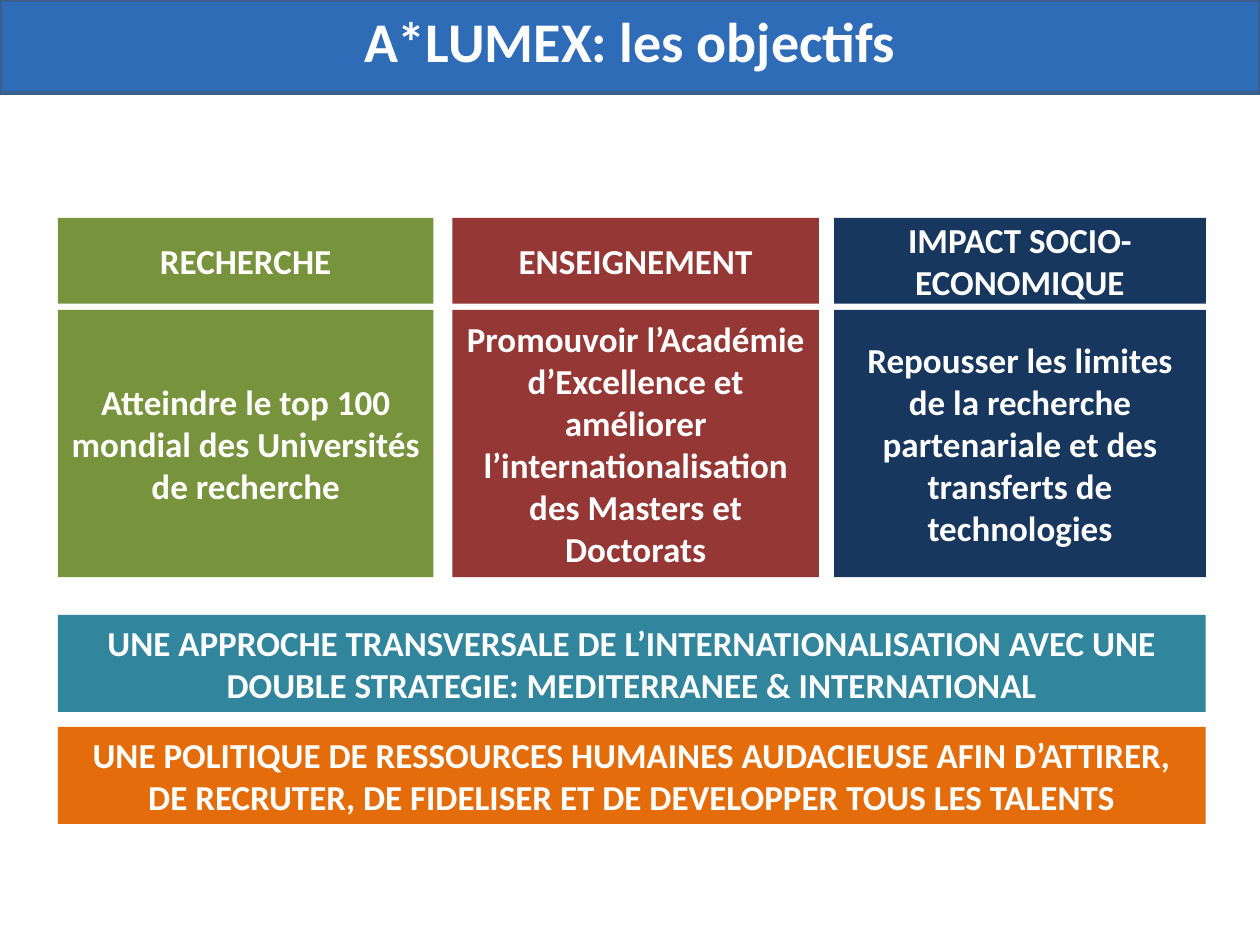
import dataclasses

import pptx
import pptx.dml.color
import pptx.enum.shapes
import pptx.enum.text
import pptx.util
from pptx.util import Inches


@dataclasses.dataclass(frozen=True)
class Theme:
    """Colours, font and type sizes of the slide."""
    font: str = "Calibri"
    title_size: int = 32
    body_size: int = 20
    text: str = "FFFFFF"
    banner: str = "2E6CB8"
    banner_edge: str = "3A5F8C"
    research: str = "77933C"
    teaching: str = "953735"
    impact: str = "17375E"
    international: str = "31859C"
    talent: str = "E46C0A"


THEME = Theme()
LEFT, FULL_WIDTH = 0.46, 9.11
HEADING_TOP, HEADING_HEIGHT = 1.73, 0.68
GOAL_TOP, GOAL_HEIGHT = 2.46, 2.12
STRATEGY_TOP, STRATEGY_HEIGHT, STRATEGY_PITCH = 4.88, 0.77, 0.89

PILLARS = [
    (LEFT, 2.98, THEME.research, "RECHERCHE",
     "Atteindre le top 100 mondial des Universités de recherche"),
    (3.59, 2.91, THEME.teaching, "ENSEIGNEMENT",
     "Promouvoir l’Académie d’Excellence et améliorer "
     "l’internationalisation des Masters et Doctorats"),
    (6.62, 2.95, THEME.impact, "IMPACT SOCIO-ECONOMIQUE",
     "Repousser les limites de la recherche partenariale "
     "et des transferts de technologies"),
]
STRATEGIES = [
    (THEME.international,
     "UNE APPROCHE TRANSVERSALE DE L’INTERNATIONALISATION AVEC UNE "
     "DOUBLE STRATEGIE: MEDITERRANEE & INTERNATIONAL"),
    (THEME.talent,
     "UNE POLITIQUE DE RESSOURCES HUMAINES AUDACIEUSE AFIN D’ATTIRER, "
     "DE RECRUTER, DE FIDELISER ET DE DEVELOPPER TOUS LES TALENTS"),
]


def rgb(value):
    """Turn a hex string into a colour."""
    return pptx.dml.color.RGBColor.from_string(value)


def write(holder, wording, size, anchor):
    """Set centred bold wording in a shape or text box."""
    frame = holder.text_frame
    frame.word_wrap = True
    frame.vertical_anchor = anchor
    paragraph = frame.paragraphs[0]
    paragraph.text = wording
    paragraph.alignment = pptx.enum.text.PP_ALIGN.CENTER
    paragraph.font.name = THEME.font
    paragraph.font.size = pptx.util.Pt(size)
    paragraph.font.bold = True
    paragraph.font.color.rgb = rgb(THEME.text)


def add_panel(slide, left, top, width, height, colour):
    """Add a plain filled rectangle without outline."""
    panel = slide.shapes.add_shape(
        pptx.enum.shapes.MSO_SHAPE.RECTANGLE,
        Inches(left), Inches(top), Inches(width), Inches(height))
    panel.shadow.inherit = False
    panel.fill.solid()
    panel.fill.fore_color.rgb = rgb(colour)
    panel.line.fill.background()
    return panel


def add_title(slide, wording):
    """Add the banner and the title over it."""
    banner = add_panel(slide, 0, 0, 10, 0.74, THEME.banner)
    banner.line.color.rgb = rgb(THEME.banner_edge)
    banner.line.width = pptx.util.Pt(2)
    title = slide.shapes.add_textbox(
        Inches(0.06), Inches(0), Inches(9.88), Inches(1.04))
    write(title, wording, THEME.title_size, pptx.enum.text.MSO_ANCHOR.TOP)


def add_pillar(slide, left, width, colour, heading, goal):
    """Add one column: its heading above its goal."""
    rows = [(HEADING_TOP, HEADING_HEIGHT, heading),
            (GOAL_TOP, GOAL_HEIGHT, goal)]
    for top, height, wording in rows:
        panel = add_panel(slide, left, top, width, height, colour)
        write(panel, wording, THEME.body_size,
              pptx.enum.text.MSO_ANCHOR.MIDDLE)


def add_strategy(slide, index, colour, wording):
    """Add one full-width strategy band."""
    band = add_panel(slide, LEFT, STRATEGY_TOP + index * STRATEGY_PITCH,
                     FULL_WIDTH, STRATEGY_HEIGHT, colour)
    write(band, wording, THEME.body_size, pptx.enum.text.MSO_ANCHOR.TOP)


def main():
    """Build and save the slide."""
    deck = pptx.Presentation()
    deck.slide_width, deck.slide_height = Inches(10), Inches(7.5)
    slide = deck.slides.add_slide(deck.slide_layouts[6])
    add_title(slide, "A*LUMEX: les objectifs")
    for pillar in PILLARS:
        add_pillar(slide, *pillar)
    for index, strategy in enumerate(STRATEGIES):
        add_strategy(slide, index, *strategy)
    deck.save("out.pptx")


if __name__ == "__main__":
    main()
